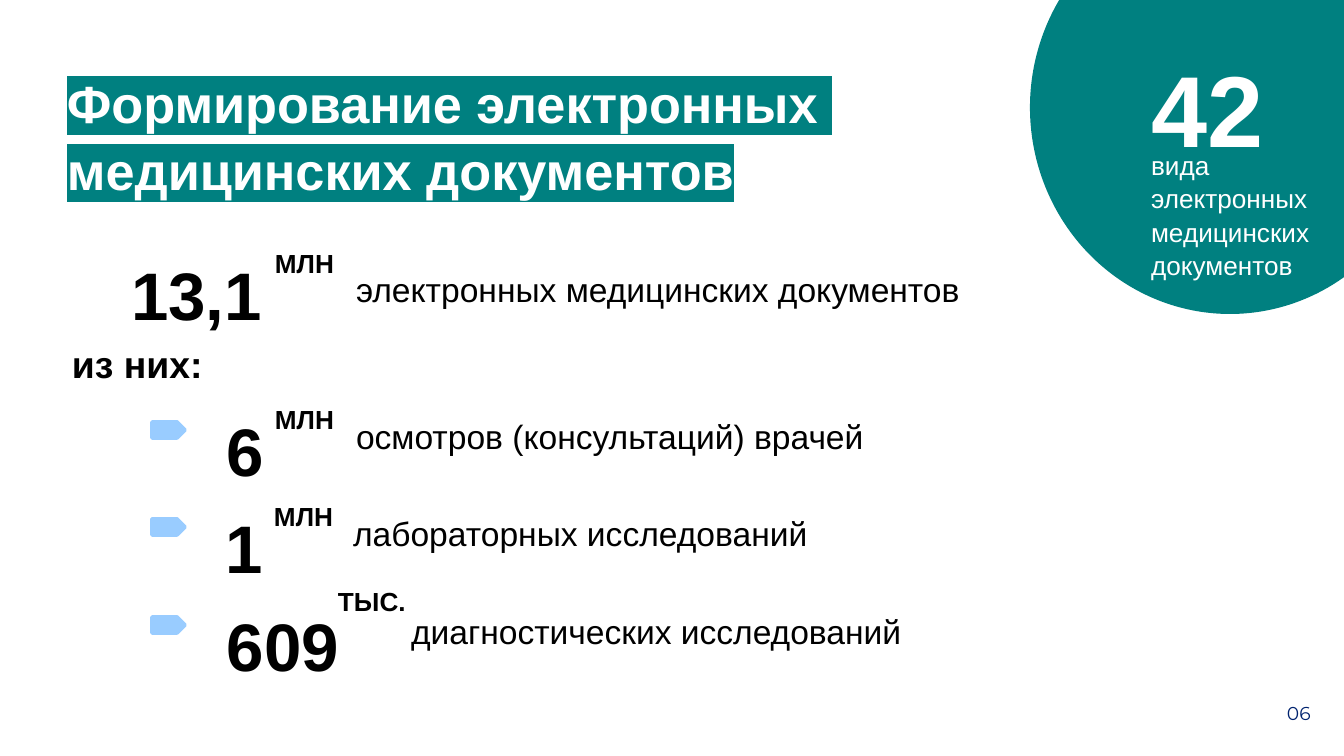
from lxml.etree import SubElement
from pptx import Presentation
from pptx.dml.color import RGBColor
from pptx.enum.shapes import MSO_SHAPE
from pptx.enum.text import MSO_ANCHOR
from pptx.oxml.ns import qn
from pptx.util import Pt

SCALE = 914400 / 134.4
PAD = 13
TEAL = RGBColor(0x00, 0x80, 0x80)
SKY = RGBColor(0x99, 0xCC, 0xFF)
NAVY = RGBColor(0x00, 0x23, 0x6F)
WHITE = RGBColor(0xFF, 0xFF, 0xFF)
BLACK = RGBColor(0x00, 0x00, 0x00)


def px(*sizes):
    """Turn whole pixels into EMU."""
    return [round(size * SCALE) for size in sizes]


def mark(run, color):
    """Put a highlight behind a run."""
    tag = SubElement(run.font._element.get_or_add_rPr() if hasattr(run.font._element, "get_or_add_rPr")
                     else run._r.get_or_add_rPr(), qn("a:highlight"))
    SubElement(tag, qn("a:srgbClr"), val=str(color))


def add_text(slide, box, lines, size, color=BLACK, bold=False, font="Arial",
             space=1.07, anchor=MSO_ANCHOR.TOP, pads=(PAD,) * 4, back=None):
    """Add a text box with one paragraph per line."""
    frame = slide.shapes.add_textbox(*px(*box)).text_frame
    frame.word_wrap = True
    frame.vertical_anchor = anchor
    (frame.margin_left, frame.margin_top,
     frame.margin_right, frame.margin_bottom) = px(*pads)
    for i, line in enumerate(lines):
        para = frame.add_paragraph() if i else frame.paragraphs[0]
        para.line_spacing = space
        run = para.add_run()
        run.text = line
        run.font.size = Pt(size)
        run.font.bold = bold
        run.font.color.rgb = color
        if back is not None:
            mark(run, back)
        run.font.name = font


def add_solid(slide, kind, box, color, width=0):
    """Add a filled shape, with a line of its own colour if it has a width."""
    shape = slide.shapes.add_shape(kind, *px(*box))
    shape.shadow.inherit = False
    shape.fill.solid()
    shape.fill.fore_color.rgb = color
    if width:
        shape.line.color.rgb = color
        shape.line.width = Pt(width)
    else:
        shape.line.fill.background()


def add_count(slide, top, count, unit, label):
    """Add a row from (left, width, text), (left, rise, text) and (left, drop, text)."""
    left, width, text = count
    add_text(slide, (left, top, width, 78), [text], 36, bold=True,
             space=1.5, anchor=MSO_ANCHOR.MIDDLE)
    left, rise, text = unit
    add_text(slide, (left, top - rise, 98, 59), [text], 14, bold=True)
    left, drop, text = label
    add_text(slide, (left, top + drop, 660, 67), [text], 18)


def add_badge(slide):
    """Add the corner circle with its figure and caption."""
    add_solid(slide, MSO_SHAPE.OVAL, (1030, -99, 400, 413), TEAL)
    add_text(slide, (1138, 38, 152, 111), ["42"], 54, WHITE, True,
             pads=(PAD, 0, 0, 0))
    add_text(slide, (1138, 134, 206, 153),
             ["вида электронных медицинских документов"], 14, WHITE)


def main():
    """Build and save the slide."""
    deck = Presentation()
    deck.slide_width, deck.slide_height = px(1344, 756)
    slide = deck.slides.add_slide(deck.slide_layouts[6])

    add_text(slide, (54, 54, 805, 144),
             ["Формирование электронных ", "медицинских документов"],
             28, WHITE, True, back=TEAL)
    add_badge(slide)

    add_count(slide, 235, (118, 164, "13,1"), (262, 3, "МЛН"),
              (343, 18, "электронных медицинских документов"))
    add_text(slide, (59, 325, 167, 73), ["из них:"], 20, bold=True)

    parts = [
        (391, (214, 63, "6"), (262, 3, "МЛН"),
         (343, 9, "осмотров (консультаций) врачей")),
        (488, (213, 63, "1"), (261, 3, "МЛН"),
         (340, 9, "лабораторных исследований")),
        (586, (214, 173, "609"), (325, 16, "ТЫС."),
         (398, 9, "диагностических исследований")),
    ]
    for part in parts:
        add_solid(slide, MSO_SHAPE.PENTAGON, (152, part[0] + 31, 33, 16), SKY, 2)
        add_count(slide, *part)

    add_text(slide, (1274, 688, 60, 50), ["06"], 10, NAVY, font="Montserrat")
    deck.save("out.pptx")


if __name__ == "__main__":
    main()
